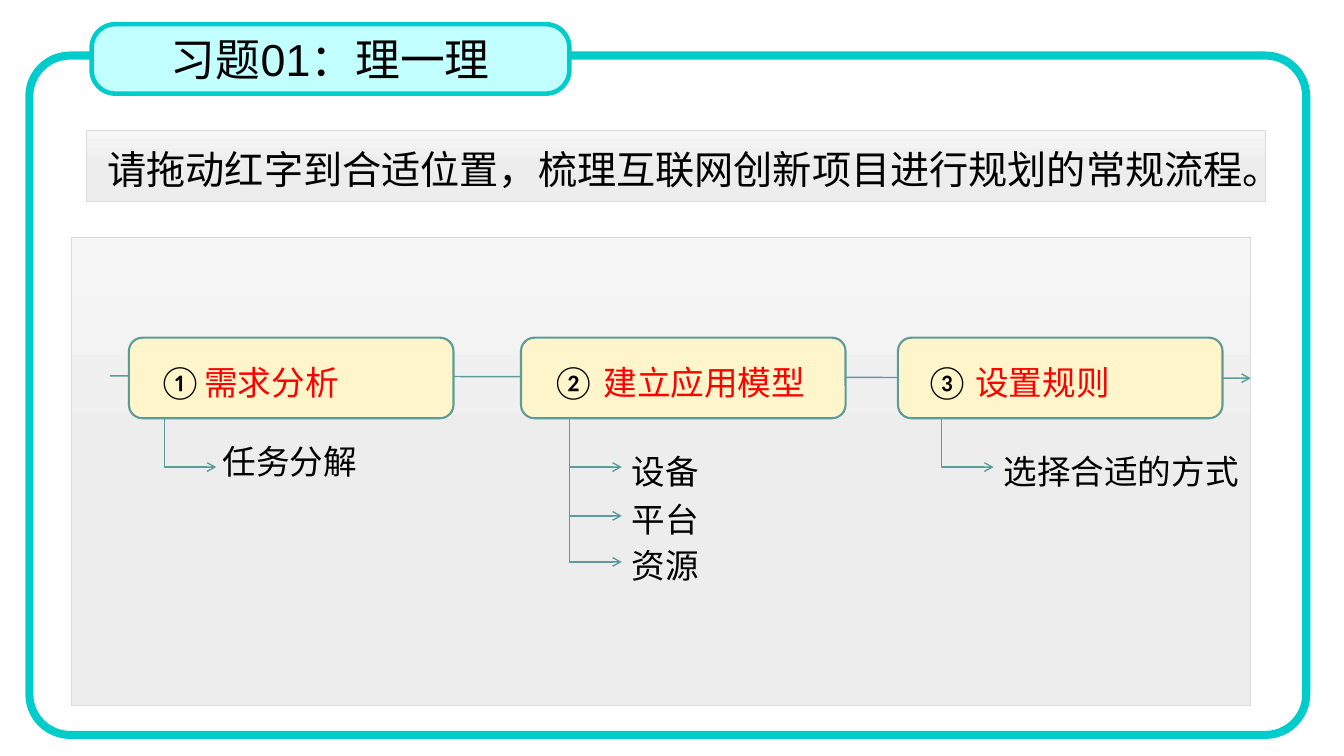
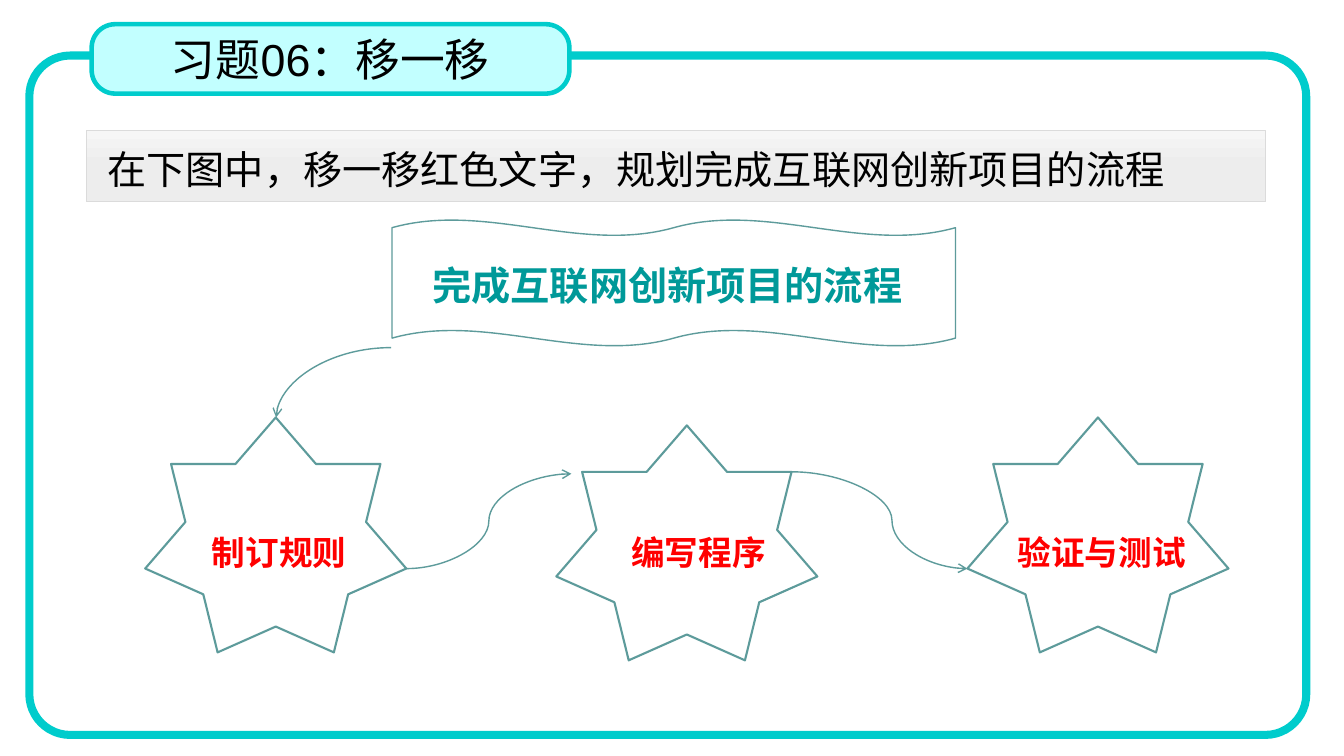
from copy import deepcopy
from dataclasses import dataclass

from lxml import etree
from pptx import Presentation
from pptx import util as u
from pptx.dml.color import RGBColor
from pptx.enum import shapes, text
from pptx.oxml.ns import qn

Shape = shapes.MSO_SHAPE
Link = shapes.MSO_CONNECTOR


@dataclass(frozen=True)
class Theme:
    ink: str = "000000"
    red: str = "FF0000"
    teal: str = "009999"
    frame: str = "00CCCC"
    title_fill: str = "C2FFFF"
    step_fill: str = "FFF5CA"
    outline: str = "5D9B9B"
    panel_line: str = "DBDBDB"
    panel_stops: tuple = ((0, "F6F6F6"), (0.5, "EDEDED"), (1, "EBEBEB"))
    title_font: str = "Arial"
    body_font: str = "Noto Sans CJK SC"
    label_font: str = "Calibri"
    title_size: int = 32
    prompt_size: int = 28
    label_size: int = 24


THEME = Theme()


def rgb(value):
    return RGBColor.from_string(value)


def write(frame, content, *, size=THEME.label_size, color=THEME.ink,
          font=THEME.body_font, east_font=THEME.body_font, bold=False,
          align=text.PP_ALIGN.LEFT, spacing=None):
    paragraph = frame.paragraphs[0]
    paragraph.alignment = align
    paragraph.line_spacing = spacing
    run = paragraph.add_run()
    run.text = content
    run.font.size = u.Pt(size)
    run.font.name = font
    run.font.bold = bold
    run.font.color.rgb = rgb(color)
    latin = run.font._element.find(qn("a:latin"))
    east = etree.Element(qn("a:ea"), typeface=east_font)
    latin.addnext(east)


class Deck:
    def __init__(self, theme):
        self.theme = theme
        self.show = Presentation()
        self.show.slide_width = u.Cm(33.87)
        self.show.slide_height = u.Cm(19.05)
        self.slide = None

    def exercise(self, title, prompt):
        t = self.theme
        self.slide = self.show.slides.add_slide(self.show.slide_layouts[6])
        self.panel(2.18, 3.28, 29.72, 1.8)
        self.shape(Shape.ROUNDED_RECTANGLE, 0.74, 1.4, 32.18, 17.12,
                   line=t.frame, weight=5.75, corner=0.06)
        tab = self.shape(Shape.ROUNDED_RECTANGLE, 2.31, 0.61, 12.04, 1.75,
                         fill=t.title_fill, line=t.frame, weight=3.25, corner=0.34)
        tab.text_frame.vertical_anchor = text.MSO_ANCHOR.MIDDLE
        write(tab.text_frame, title, size=t.title_size, font=t.title_font,
              align=text.PP_ALIGN.CENTER)
        self.label(prompt, 2.46, 2.95, 29.44, 2.06, size=t.prompt_size)

    def shape(self, kind, x, y, w, h, fill=None, line=THEME.outline, weight=1.5, corner=None):
        shape = self.slide.shapes.add_shape(kind, u.Cm(x), u.Cm(y), u.Cm(w), u.Cm(h))
        shape.shadow.inherit = False
        if fill:
            shape.fill.solid()
            shape.fill.fore_color.rgb = rgb(fill)
        else:
            shape.fill.background()
        shape.line.color.rgb = rgb(line)
        shape.line.width = u.Pt(weight)
        if corner is not None:
            shape.adjustments[0] = corner
        return shape

    def panel(self, x, y, w, h):
        panel = self.shape(Shape.RECTANGLE, x, y, w, h, line=self.theme.panel_line, weight=0.5)
        panel.fill.gradient()
        panel.fill.gradient_angle = 270
        stops = panel._element.spPr.find(".//" + qn("a:gsLst"))
        stops.append(deepcopy(stops[-1]))
        for stop, (position, color) in zip(panel.fill.gradient_stops, self.theme.panel_stops):
            stop.position = position
            stop.color.rgb = rgb(color)

    def label(self, content, x, y, w, h=1.8, **style):
        box = self.slide.shapes.add_textbox(u.Cm(x), u.Cm(y), u.Cm(w), u.Cm(h))
        box.text_frame.word_wrap = True
        box.text_frame.auto_size = text.MSO_AUTO_SIZE.SHAPE_TO_FIT_TEXT
        write(box.text_frame, content, spacing=1.5, **style)

    def arrow(self, kind, start, end, preset=None, bend=None):
        ends = [u.Cm(value) for value in (*start, *end)]
        arrow = self.slide.shapes.add_connector(kind, *ends)
        arrow.line.color.rgb = rgb(self.theme.outline)
        arrow.line.width = u.Pt(1)
        properties = arrow._element.spPr
        etree.SubElement(properties.find(qn("a:ln")), qn("a:tailEnd"), type="arrow")
        etree.SubElement(properties, qn("a:effectLst"))
        geometry = properties.find(qn("a:prstGeom"))
        if preset:
            geometry.set("prst", preset)
        if bend:
            etree.SubElement(geometry.find(qn("a:avLst")), qn("a:gd"),
                             name="adj1", fmla=f"val {round(bend * 100000)}")
        return arrow

    def branch(self, x, y, across=1.31, down=1.23):
        mid_x, mid_y = x + across / 2, y + down / 2
        branch = self.arrow(Link.ELBOW,
                            (mid_x - down / 2, mid_y + across / 2),
                            (mid_x + down / 2, mid_y - across / 2),
                            preset="bentConnector2")
        branch._element.spPr.find(qn("a:xfrm")).set("rot", "5400000")


def planning_steps(deck):
    t = deck.theme
    deck.exercise("习题01：理一理", "请拖动红字到合适位置，梳理互联网创新项目进行规划的常规流程。")
    deck.panel(1.8, 5.99, 29.72, 11.79)
    deck.arrow(Link.STRAIGHT, (2.77, 9.47), (31.52, 9.53))

    steps = (
        (3.25, "①", 3.73, "需求分析", 4.9, 4.14),
        (13.13, "②", 13.64, "建立应用模型", 14.96, 14.36),
        (22.63, "③", 23.06, "设置规则", 24.33, 23.73),
    )
    for box_x, number, number_x, name, name_x, branch_x in steps:
        deck.shape(Shape.FLOWCHART_ALTERNATE_PROCESS, box_x, 8.51, 8.18, 2.03,
                   fill=t.step_fill)
        deck.label(number, number_x, 8.47, 5.36, font=t.label_font, east_font=t.label_font)
        deck.label(name, name_x, 8.48, 7.04, font=t.label_font, color=t.red)

    tasks = (
        ("任务分解", 4.14, 10.54, 1.22, -0.05),
        ("设备", 14.36, 10.54, 1.31, 0.18),
        ("平台", 14.36, 11.77, 1.31, 0.18),
        ("资源", 14.36, 12.93, 1.31, 0.18),
        ("选择合适的方式", 23.73, 10.54, 1.31, 0.18),
    )
    for task, x, y, indent, drop in tasks:
        deck.branch(x, y)
        deck.label(task, x + indent, y + drop, 8.18)


def completion_flow(deck):
    t = deck.theme
    deck.exercise("习题06：移一移", "在下图中，移一移红色文字，规划完成互联网创新项目的流程")
    deck.shape(Shape.DOUBLE_WAVE, 9.88, 5.54, 14.2, 3.18, weight=1)
    deck.label("完成互联网创新项目的流程", 10.52, 5.87, 12.6, 2.06, size=t.prompt_size,
               color=t.teal, bold=True, align=text.PP_ALIGN.CENTER)

    stages = (("制订规则", 10.52, 4.24), ("编写程序", 10.72, 14.81), ("验证与测试", 10.52, 24.97))
    for index, (stage, star_y, stage_x) in enumerate(stages):
        deck.shape(Shape.STAR_7_POINT, 3.66 + index * 10.36, star_y, 6.58, 5.92)
        deck.label(stage, stage_x, 12.78, 5.59, color=t.red, bold=True,
                   align=text.PP_ALIGN.CENTER)

    deck.arrow(Link.CURVE, (9.86, 8.76), (6.96, 10.52), preset="curvedConnector2")
    deck.arrow(Link.CURVE, (10.24, 14.33), (14.4, 11.94), bend=0.5)
    deck.arrow(Link.CURVE, (19.96, 11.89), (24.38, 14.33), bend=0.57)


def main():
    deck = Deck(THEME)
    planning_steps(deck)
    completion_flow(deck)
    deck.show.save("out.pptx")


if __name__ == "__main__":
    main()
